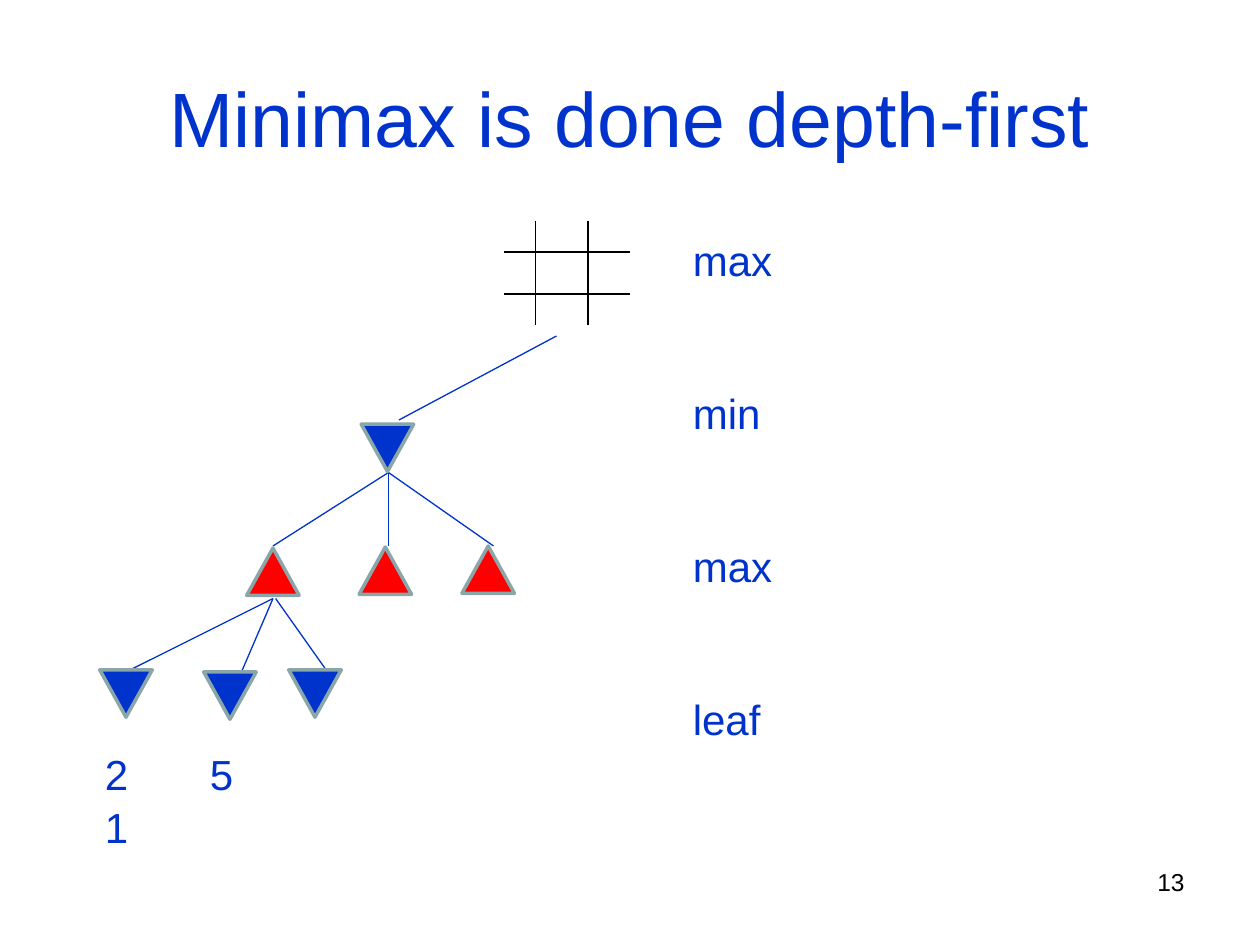
from dataclasses import dataclass

from lxml import etree
from pptx import Presentation
from pptx.dml.color import RGBColor
from pptx.enum.shapes import MSO_CONNECTOR, MSO_SHAPE
from pptx.enum.text import MSO_ANCHOR, PP_ALIGN
from pptx.oxml.ns import qn
from pptx.util import Inches, Pt

STRAIGHT = MSO_CONNECTOR.STRAIGHT
TRIANGLE = MSO_SHAPE.ISOSCELES_TRIANGLE
LEFT, CENTER, RIGHT = PP_ALIGN.LEFT, PP_ALIGN.CENTER, PP_ALIGN.RIGHT
MIDDLE = MSO_ANCHOR.MIDDLE
TITLE_ONLY = 5


@dataclass(frozen=True)
class Theme:
    font: str = "Arial"
    blue: RGBColor = RGBColor(0x00, 0x33, 0xCC)
    red: RGBColor = RGBColor(0xFF, 0x00, 0x00)
    black: RGBColor = RGBColor(0x00, 0x00, 0x00)
    outline: RGBColor = RGBColor(0x8A, 0xA6, 0xA8)
    title_size: int = 44
    body_size: int = 24
    number_size: int = 14
    thin: float = 0.75
    thick: float = 2


theme = Theme()
presentation = Presentation()
presentation.slide_width = Inches(10)
presentation.slide_height = Inches(7.5)
slide = presentation.slides.add_slide(presentation.slide_layouts[TITLE_ONLY])

# The slide is a grid of 120 columns by 90 rows of square cells.
cell = presentation.slide_width / 120


def grid(*cells):
    return [round(count * cell) for count in cells]


def add_run(paragraph, text, size, color):
    run = paragraph.add_run()
    run.text = text
    run.font.name = theme.font
    run.font.size = Pt(size)
    run.font.color.rgb = color


# Title
title = slide.shapes.title
title.left, title.top, title.width, title.height = grid(6, 3.6, 108, 15)
title.text_frame.vertical_anchor = MIDDLE
paragraph = title.text_frame.paragraphs[0]
paragraph.alignment = CENTER
add_run(paragraph, "Minimax is done depth-first", theme.title_size, theme.blue)

# Game board and tree branches: (from column, from row, to column, to row)
board = [(column, 21, column, 31) for column in (51, 56)]
board += [(48, row, 60, row) for row in (24, 28)]
branches = [(53, 32, 38, 40)]
branches += [(37, 45, column, 52) for column in (26, 37, 47)]
branches += [(start, 57, end, 64)
             for start, end in ((26, 12), (26, 23), (26.25, 31.2))]

for lines, color in ((board, theme.black), (branches, theme.blue)):
    for ends in lines:
        connector = slide.shapes.add_connector(STRAIGHT, *grid(*ends))
        connector.line.color.rgb = color
        connector.line.width = Pt(theme.thin)
        etree.SubElement(connector.element.spPr, qn("a:effectLst"))

# Nodes: max points up in red, min points down in blue
max_nodes = [(23.5, 52.2), (34.2, 52.1), (44, 52)]
min_nodes = [(34.4, 40.4), (9.5, 63.8), (19.4, 64), (27.5, 63.8)]

for nodes, color, rotation in ((max_nodes, theme.red, 0),
                               (min_nodes, theme.blue, 180)):
    for column, row in nodes:
        node = slide.shapes.add_shape(TRIANGLE, *grid(column, row, 5, 4.5))
        node.rotation = rotation
        node.shadow.inherit = False
        node.fill.solid()
        node.fill.fore_color.rgb = color
        node.line.color.rgb = theme.outline
        node.line.width = Pt(theme.thick)

# Level names, one paragraph per level of the tree
levels = slide.shapes.add_textbox(*grid(64.8, 21.5, 12, 49)).text_frame
levels.word_wrap = True
for index, name in enumerate(("max", "min", "max", "leaf")):
    paragraph = levels.add_paragraph() if index else levels.paragraphs[0]
    paragraph.alignment = LEFT
    paragraph.line_spacing = 1.05
    paragraph.space_before = Pt(57.3 if index else 0)
    add_run(paragraph, name, theme.body_size, theme.blue)

# Leaf values, the second one at a tab stop under its leaf
values = slide.shapes.add_textbox(*grid(8.8, 70.5, 25.7, 11)).text_frame
values.word_wrap = True
paragraph = values.paragraphs[0]
paragraph.line_spacing = 1.05
add_run(paragraph, "2\t5", theme.body_size, theme.blue)
paragraph.add_line_break()
add_run(paragraph, "1", theme.body_size, theme.blue)
tabs = etree.SubElement(paragraph._p.get_or_add_pPr(), qn("a:tabLst"))
etree.SubElement(tabs, qn("a:tab"), pos=str(grid(10)[0]), algn="l")

# Slide number
number = slide.shapes.add_textbox(*grid(86, 82, 28, 6.2)).text_frame
number.word_wrap = True
paragraph = number.paragraphs[0]
paragraph.alignment = RIGHT
add_run(paragraph, "13", theme.number_size, theme.black)

presentation.save("out.pptx")
